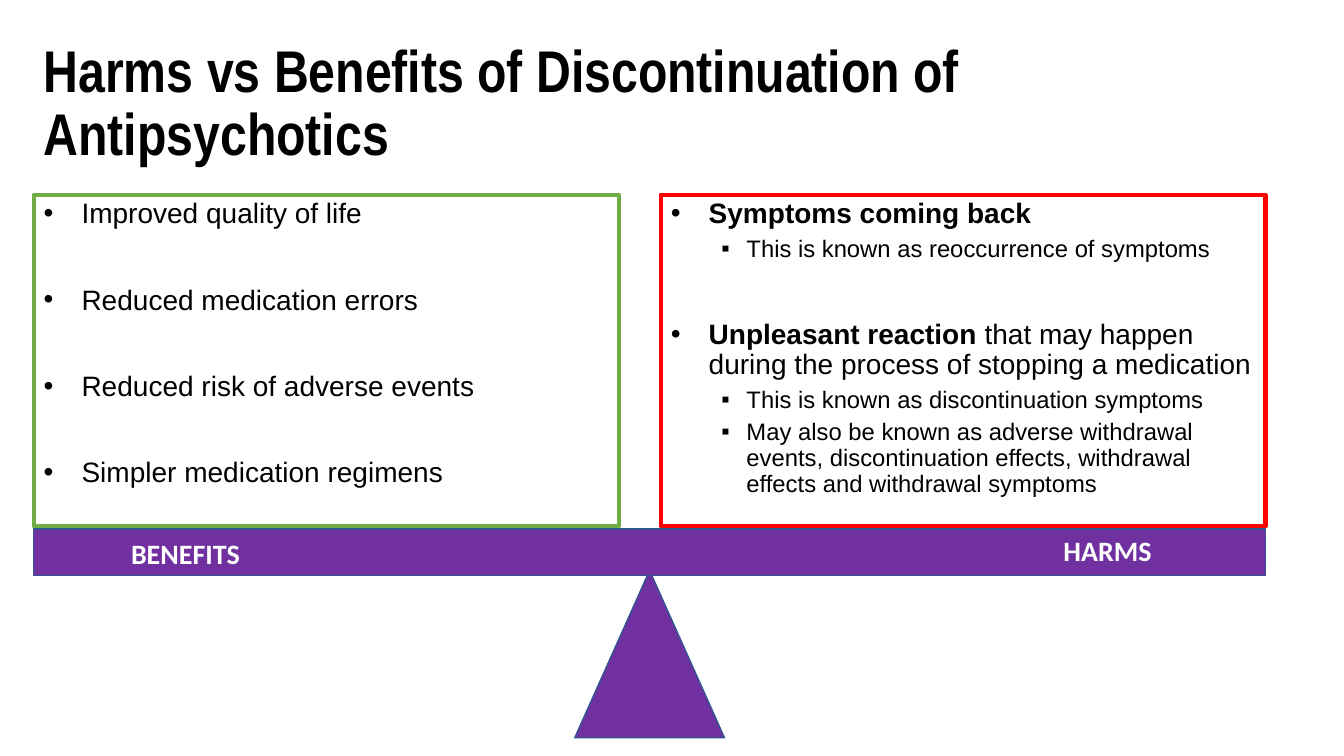
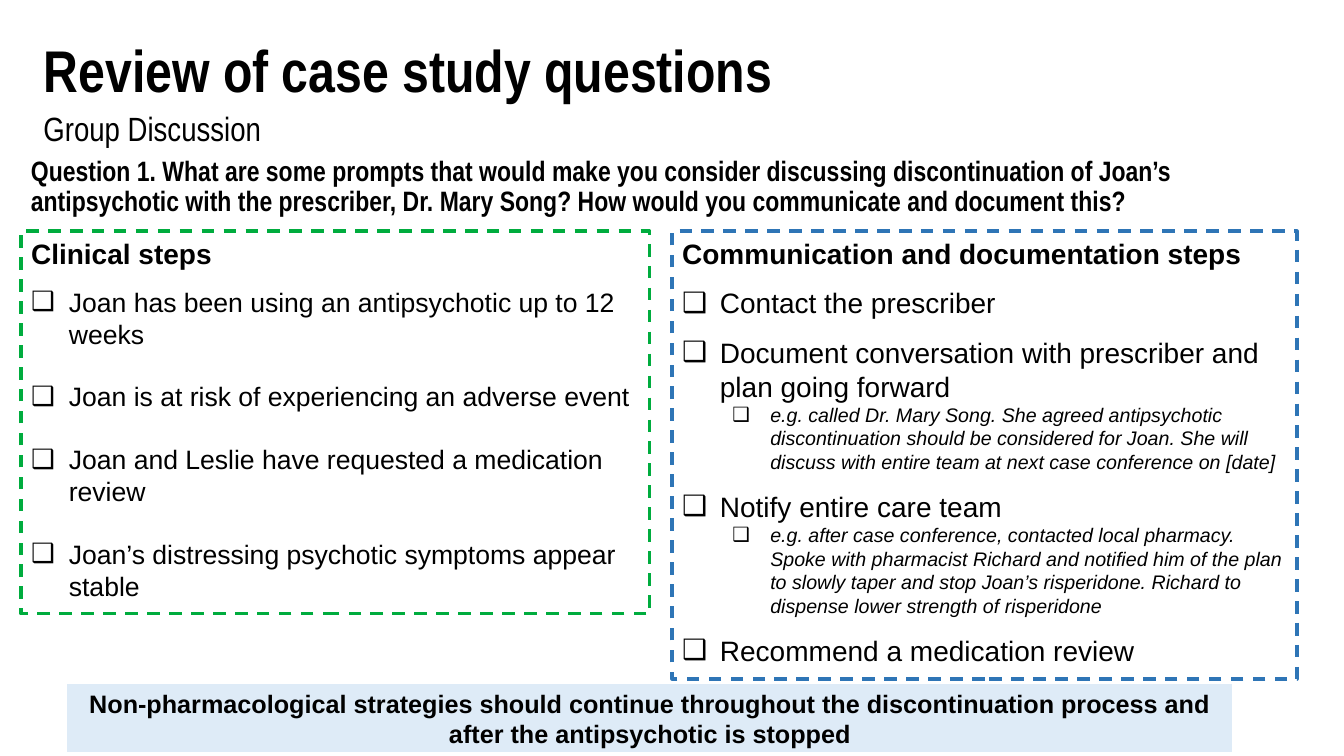
from lxml import etree
from pptx import Presentation
from pptx.dml.color import RGBColor
from pptx.enum.dml import MSO_LINE_DASH_STYLE as Dash
from pptx.enum.shapes import MSO_SHAPE as Shape
from pptx.enum.text import MSO_ANCHOR as Anchor, MSO_AUTO_SIZE as AutoSize, PP_ALIGN as Align
from pptx.oxml.ns import qn
from pptx.util import Pt

# Shared look
BLACK, WHITE, PURPLE, OUTLINE = "000000", "FFFFFF", "7030A0", "325491"
NARROW = "Arial Narrow"
TITLE = dict(size=42, font=NARROW, bold=True, spacing=0.9)
MARGIN, TITLE_TOP = 24, 26

# Paragraph styles
POINT = dict(size=20, bullet="•", left=27, hang=27, spacing=0.9)
DETAIL = dict(size=17, bullet="▪", left=54, hang=18, spacing=0.9, before=5, level=1)
HEADING = dict(size=20, bold=True)
STEP = dict(size=20, bullet="❑", left=27, hang=27, before=11.5)
EXAMPLE = dict(size=14, bullet="❑", left=63, hang=27, italic=True, level=1)

# Slide 1 content; ** at the start of a run makes it bold
BALANCE_TITLE = "Harms vs Benefits of Discontinuation of Antipsychotics"
BENEFITS = [(text, dict(POINT, before=40)) for text in (
    "Improved quality of life",
    "Reduced medication errors",
    "Reduced risk of adverse events",
    "Simpler medication regimens",
)]
HARMS = [
    ("**Symptoms coming back", POINT),
    ("This is known as reoccurrence of symptoms", DETAIL),
    (["**Unpleasant reaction ",
      "that may happen during the process of stopping a medication"], dict(POINT, before=41)),
    ("This is known as discontinuation symptoms", DETAIL),
    ("May also be known as adverse withdrawal events, discontinuation effects, "
     "withdrawal effects and withdrawal symptoms", DETAIL),
]

# Slide 2 content
REVIEW_TITLE = "Review of case study questions"
SUBTITLE = "Group Discussion"
QUESTION = ("Question 1. What are some prompts that would make you consider discussing "
            "discontinuation of Joan’s antipsychotic with the prescriber, Dr. Mary Song? "
            "How would you communicate and document this?")
CLINICAL = [("Clinical steps", HEADING)] + [
    (text, dict(STEP, size=19, before=22 if index else 11.5)) for index, text in enumerate((
        "Joan has been using an antipsychotic up to 12 weeks",
        "Joan is at risk of experiencing an adverse event",
        "Joan and Leslie have requested a medication review",
        "Joan’s distressing psychotic symptoms appear stable",
    ))]
COMMUNICATION = [
    ("Communication and documentation steps", HEADING),
    ("Contact the prescriber", STEP),
    ("Document conversation with prescriber and plan going forward", STEP),
    ("e.g. called Dr. Mary Song. She agreed antipsychotic discontinuation should be "
     "considered for Joan. She will discuss with entire team at next case conference "
     "on [date]", EXAMPLE),
    ("Notify entire care team", STEP),
    ("e.g. after case conference, contacted local pharmacy. Spoke with pharmacist Richard "
     "and notified him of the plan to slowly taper and stop Joan’s risperidone. Richard to "
     "dispense lower strength of risperidone", EXAMPLE),
    ("Recommend a medication review", STEP),
]
REMINDER = ("Non-pharmacological strategies should continue throughout the discontinuation "
            "process and after the antipsychotic is stopped")


def rgb(hex_color):
    return RGBColor.from_string(hex_color)


def write(paragraph, text, size=20, font="Arial", color=BLACK, bold=False, italic=False,
          align=Align.LEFT, spacing=1.0, before=0, bullet=None, left=0, hang=0, level=0):
    paragraph.level = level
    props = paragraph._p.get_or_add_pPr()
    props.set("marL", str(Pt(left)))
    props.set("indent", str(-Pt(hang)))
    if bullet:
        etree.SubElement(props, qn("a:buFont")).set("typeface", "Arial")
        etree.SubElement(props, qn("a:buChar")).set("char", bullet)
    else:
        etree.SubElement(props, qn("a:buNone"))
    paragraph.alignment = align
    paragraph.line_spacing = spacing
    paragraph.space_before = Pt(before)
    paragraph.space_after = Pt(0)
    for part in [text] if isinstance(text, str) else text:
        run = paragraph.add_run()
        run.text = part.removeprefix("**")
        run.font.size, run.font.name = Pt(size), font
        run.font.bold, run.font.italic = bold or part.startswith("**"), italic
        run.font.color.rgb = rgb(color)


def fill_text(holder, items, anchor=Anchor.TOP):
    frame = holder.text_frame
    frame.word_wrap, frame.auto_size, frame.vertical_anchor = True, AutoSize.NONE, anchor
    for index, (text, style) in enumerate(items):
        paragraph = frame.paragraphs[0] if index == 0 else frame.add_paragraph()
        write(paragraph, text, **(style if index else dict(style, before=0)))


def place(holder, left, top, width, height):
    holder.left, holder.top, holder.width, holder.height = map(Pt, (left, top, width, height))


def paint(holder, fill=None, line=None, weight=1, dash=None):
    if fill:
        holder.fill.solid()
        holder.fill.fore_color.rgb = rgb(fill)
    if line:
        holder.line.color.rgb = rgb(line)
        holder.line.width = Pt(weight)
    if dash:
        holder.line.dash_style = dash


def add_label(slide, box, text, **style):
    label = slide.shapes.add_textbox(*map(Pt, box))
    fill_text(label, [(text, style)])
    return label


def add_shape(slide, kind, box, **look):
    shape = slide.shapes.add_shape(kind, *map(Pt, box))
    shape.shadow.inherit = False
    paint(shape, **look)
    return shape


def add_slide(deck, title, title_size, panels):
    """Slide with a title and two outlined panels: (box, items, look)."""
    slide = deck.slides.add_slide(deck.slide_layouts[3])
    heading, *bodies = slide.placeholders
    place(heading, MARGIN, TITLE_TOP, *title_size)
    fill_text(heading, [(title, TITLE)])
    for body, (box, items, look) in zip(bodies, panels):
        place(body, *box)
        paint(body, **look)
        fill_text(body, items)
    return slide


def build_balance(deck):
    beam_width, panel_top, panel_height = 880, 139, 237
    slide = add_slide(deck, BALANCE_TITLE, (677, 113), [
        ((MARGIN, panel_top, 418, panel_height), BENEFITS,
         dict(fill=WHITE, line="70AD47", weight=3)),
        ((MARGIN + beam_width - 432, panel_top, 432, panel_height), HARMS,
         dict(line="FF0000", weight=3)),
    ])
    # Scale: pivot behind the beam
    pivot_width = 107
    pivot_left = MARGIN + (beam_width - pivot_width) / 2
    scale = dict(fill=PURPLE, line=OUTLINE)
    add_shape(slide, Shape.FLOWCHART_EXTRACT, (pivot_left, 407.5, pivot_width, 119.5), **scale)
    add_shape(slide, Shape.RECTANGLE, (MARGIN, 378, beam_width, 33), **scale)
    for text, left, top in (("BENEFITS", 86.5, 379.5), ("HARMS", 752.5, 377.5)):
        add_label(slide, (left, top, 121, 31.5), text,
                  font="Calibri", color=WHITE, bold=True)


def build_review(deck):
    panel_top = 165
    dashed = dict(weight=2.25, dash=Dash.DASH)
    slide = add_slide(deck, REVIEW_TITLE, (587, 58), [
        ((15, panel_top, 449, 273.5), CLINICAL, dict(dashed, line="00AC3E")),
        ((480, panel_top, 446.5, 320), COMMUNICATION, dict(dashed, line="2E75B6")),
    ])
    add_label(slide, (MARGIN, 77, 587, 37), SUBTITLE, size=24, font=NARROW, spacing=0.9)
    add_label(slide, (15, 109, 834.5, 51), QUESTION, font=NARROW, bold=True, spacing=0.9)
    # Closing reminder
    banner = add_shape(slide, Shape.RECTANGLE, (47, 487.5, 834.5, 51),
                       fill="DEEBF7", line=WHITE, weight=2.25)
    fill_text(banner, [(REMINDER, dict(size=18, bold=True, align=Align.CENTER))], Anchor.MIDDLE)


def main():
    deck = Presentation()
    deck.slide_width, deck.slide_height = Pt(960), Pt(540)
    build_balance(deck)
    build_review(deck)
    deck.save("out.pptx")


if __name__ == "__main__":
    main()
